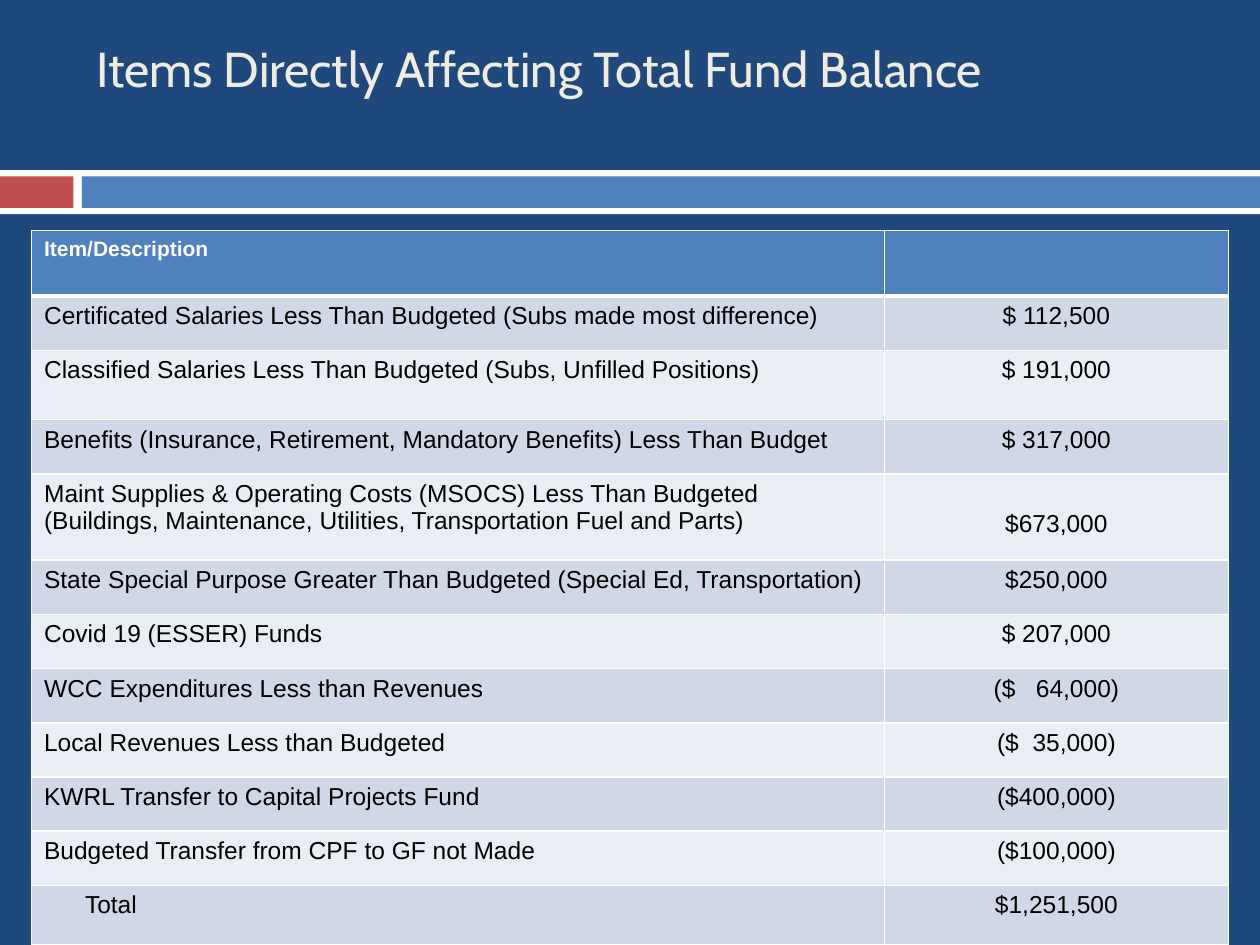
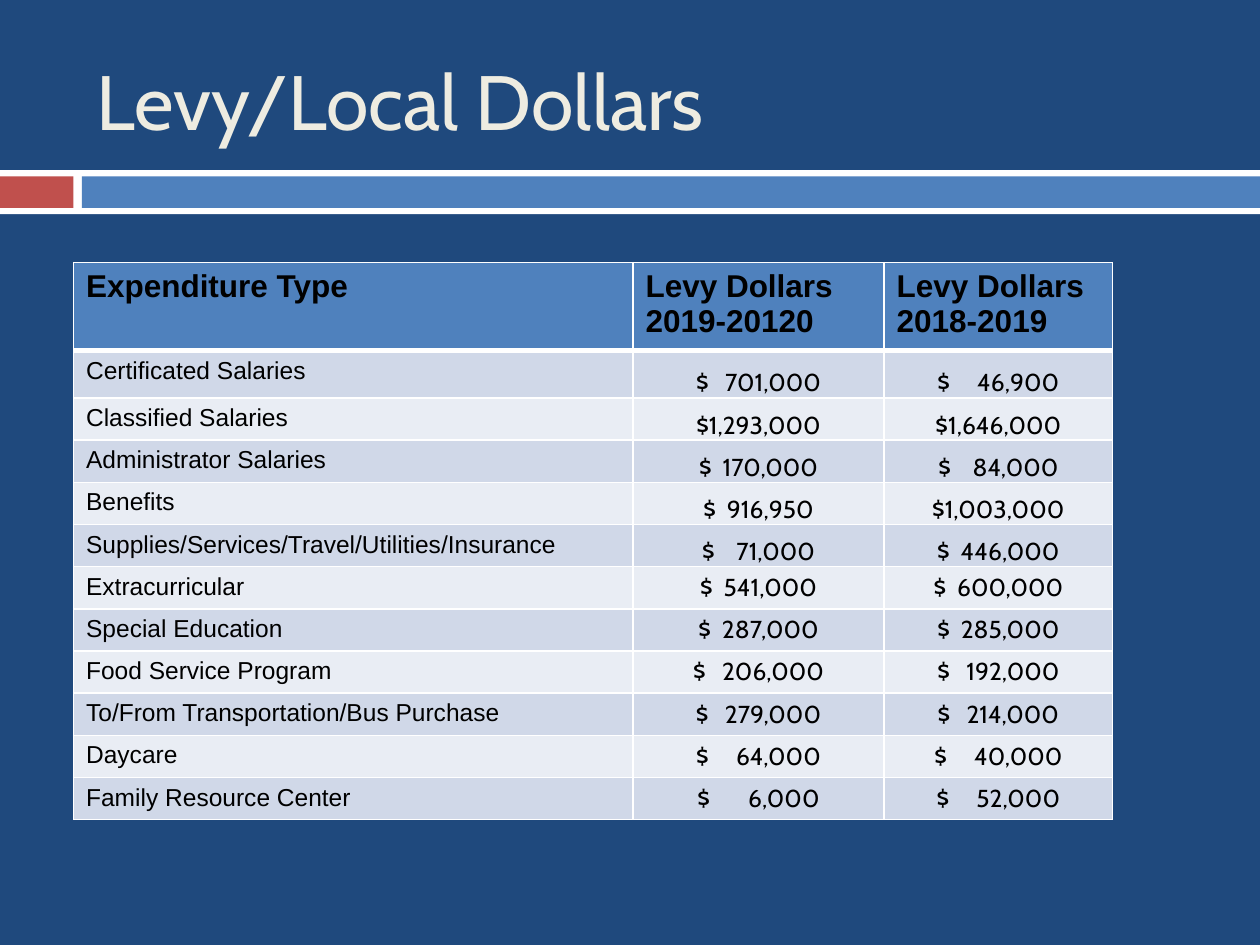
"""Build two fund balance slides, each a title, a colour band and a table."""
import pptx
import pptx.dml.color
import pptx.enum.shapes
import pptx.enum.text
import pptx.oxml
import pptx.oxml.ns
import pptx.util

Pt = pptx.util.Pt
RGB = pptx.dml.color.RGBColor
PP_ALIGN = pptx.enum.text.PP_ALIGN
ANCHOR = pptx.enum.text.MSO_ANCHOR

NAVY = RGB(0x1F, 0x49, 0x7D)
CREAM = RGB(0xEE, 0xEC, 0xE1)
RED = RGB(0xC0, 0x50, 0x4D)
BLUE = RGB(0x4F, 0x81, 0xBD)
WHITE = RGB(0xFF, 0xFF, 0xFF)
BLACK = RGB(0, 0, 0)
STRIPES = RGB(0xD0, 0xD8, 0xE8), RGB(0xE9, 0xED, 0xF4)

HEADING_FONT, BODY_FONT = "Cabin", "Arial"
BODY_SIZE = 14
CELL_LEFT = 7.2
SPACE_WIDTH = {"Arial": 3.9, "Cabin": 3.1}

BANDS = [(0, 97.2, 720, 25.2, WHITE),
         (0, 100.8, 42, 18, RED),
         (46.8, 100.8, 673.2, 18, BLUE)]

# Amounts are (text, width of the gap after the dollar sign in spaces).
FUND_BALANCE = dict(
    title="Items Directly Affecting Total Fund Balance",
    title_size=28, title_height=41.8,
    left=18, top=131.8, columns=[487.4, 196.6],
    heights=[37.4, 31, 39.6, 31, 49.3] + [31] * 6 + [34],
    header=["Item/Description", ""],
    header_size=12, header_color=WHITE, amount_font=BODY_FONT,
    rows=[
        ("Certificated Salaries Less Than Budgeted (Subs made most difference)", ("$ 112,500", 1)),
        ("Classified Salaries Less Than Budgeted (Subs, Unfilled Positions)", ("$ 191,000", 1)),
        ("Benefits (Insurance, Retirement, Mandatory Benefits) Less Than Budget", ("$ 317,000", 1)),
        ("Maint Supplies & Operating Costs (MSOCS) Less Than Budgeted "
         "(Buildings, Maintenance, Utilities, Transportation Fuel and Parts)", ("$673,000", 0)),
        ("State Special Purpose Greater Than Budgeted (Special Ed, Transportation)", ("$250,000", 0)),
        ("Covid 19 (ESSER) Funds", ("$ 207,000", 1)),
        ("WCC Expenditures Less than Revenues", ("($ 64,000)", 3)),
        ("Local Revenues Less than Budgeted", ("($ 35,000)", 2)),
        ("KWRL Transfer to Capital Projects Fund", ("($400,000)", 0)),
        ("Budgeted Transfer from CPF to GF not Made", ("($100,000)", 0)),
        ("Total", ("$1,251,500", 0)),
    ])

LEVY = dict(
    title="Levy/Local Dollars",
    title_size=44, title_height=77.8,
    left=42, top=150, columns=[319.7, 143.5, 130.6],
    heights=[46.8, 27] + [24.1] * 10,
    header=["Expenditure Type", "Levy Dollars\n2019-20120", "Levy Dollars\n2018-2019"],
    header_size=18, header_color=BLACK, amount_font=HEADING_FONT,
    rows=[
        ("Certificated Salaries", ("$ 701,000", 3), ("$ 46,900", 5)),
        ("Classified Salaries", ("$1,293,000", 0), ("$1,646,000", 0)),
        ("Administrator Salaries", ("$ 170,000", 2), ("$ 84,000", 4)),
        ("Benefits", ("$ 916,950", 2), ("$1,003,000", 0)),
        ("Supplies/Services/Travel/Utilities/Insurance", ("$ 71,000", 4), ("$ 446,000", 2)),
        ("Extracurricular", ("$ 541,000", 2), ("$ 600,000", 2)),
        ("Special Education", ("$ 287,000", 2), ("$ 285,000", 2)),
        ("Food Service Program", ("$ 206,000", 3), ("$ 192,000", 3)),
        ("To/From Transportation/Bus Purchase", ("$ 279,000", 3), ("$ 214,000", 3)),
        ("Daycare", ("$ 64,000", 5), ("$ 40,000", 5)),
        ("Family Resource Center", ("$ 6,000", 7), ("$ 52,000", 5)),
    ])
LOW_LEVY_ROWS = 5


def add_run(p, text, size, font, color, bold=False):
    r = p.add_run()
    r.text = text
    r.font.size, r.font.name, r.font.bold = Pt(size), font, bold
    r.font.color.rgb = color
    return r


def add_amount(cell, text, gap, font):
    p = cell.text_frame.paragraphs[0]
    p.alignment = PP_ALIGN.CENTER
    sign, space, number = text.partition(" ")
    for part in filter(None, (sign, space, number)):
        r = add_run(p, part, BODY_SIZE, font, BLACK)
        if part == " " and gap > 1:
            extra = (gap - 1) * SPACE_WIDTH[font]
            r._r.get_or_add_rPr().set("spc", str(round(extra * 100)))


def style_cell(cell, fill, top=1, bottom=1):
    tc_pr = cell._tc.get_or_add_tcPr()
    for side, width in zip("LRTB", (1, 1, top, bottom)):
        tc_pr.append(pptx.oxml.parse_xml(
            f'<a:ln{side} {pptx.oxml.ns.nsdecls("a")} w="{Pt(width)}"><a:solidFill>'
            f'<a:srgbClr val="{WHITE}"/></a:solidFill></a:ln{side}>'))
    cell.fill.solid()
    cell.fill.fore_color.rgb = fill


def add_table(s, data):
    columns, heights = data["columns"], data["heights"]
    table = s.shapes.add_table(
        len(heights), len(columns), Pt(data["left"]), Pt(data["top"]),
        Pt(sum(columns)), Pt(sum(heights))).table
    for column, width in zip(table.columns, columns):
        column.width = Pt(width)
    for row, height in zip(table.rows, heights):
        row.height = Pt(height)
    for i, heading in enumerate(data["header"]):
        cell = table.cell(0, i)
        style_cell(cell, BLUE, bottom=3)
        tf = cell.text_frame
        for n, line in enumerate(heading.splitlines()):
            p = tf.add_paragraph() if n else tf.paragraphs[0]
            add_run(p, line, data["header_size"], BODY_FONT, data["header_color"], True)
    for i, (label, *amounts) in enumerate(data["rows"], 1):
        for j in range(len(columns)):
            style_cell(table.cell(i, j), STRIPES[(i - 1) % 2], top=3 if i == 1 else 1)
        add_run(table.cell(i, 0).text_frame.paragraphs[0], label, BODY_SIZE, BODY_FONT, BLACK)
        for j, (text, gap) in enumerate(amounts, 1):
            add_amount(table.cell(i, j), text, gap, data["amount_font"])
    return table


def add_slide(prs, data):
    s = prs.slides.add_slide(prs.slide_layouts[6])
    s.background.fill.solid()
    s.background.fill.fore_color.rgb = NAVY
    for *box, color in BANDS:
        sp = s.shapes.add_shape(pptx.enum.shapes.MSO_SHAPE.RECTANGLE, *map(Pt, box))
        sp.shadow.inherit = False
        sp.fill.solid()
        sp.fill.fore_color.rgb = color
        sp.line.fill.background()
    tf = s.shapes.add_textbox(Pt(48), Pt(18), Pt(642), Pt(data["title_height"])).text_frame
    tf.word_wrap = True
    tf.vertical_anchor = ANCHOR.MIDDLE
    add_run(tf.paragraphs[0], data["title"], data["title_size"], HEADING_FONT, CREAM)
    return add_table(s, data)


def main():
    prs = pptx.Presentation()
    prs.slide_width, prs.slide_height = Pt(720), Pt(540)

    fund_table = add_slide(prs, FUND_BALANCE)
    fund_table.cell(4, 1).margin_top = Pt(20.6)
    fund_table.cell(11, 0).margin_left = Pt(CELL_LEFT + 6 * SPACE_WIDTH[BODY_FONT])

    levy_table = add_slide(prs, LEVY)
    for i in range(1, LOW_LEVY_ROWS + 1):
        for j in (1, 2):
            cell = levy_table.cell(i, j)
            cell.vertical_anchor = ANCHOR.BOTTOM
            cell.margin_left = cell.margin_right = cell.margin_top = Pt(0.72)
            cell.margin_bottom = 0

    prs.save("out.pptx")


if __name__ == "__main__":
    main()
